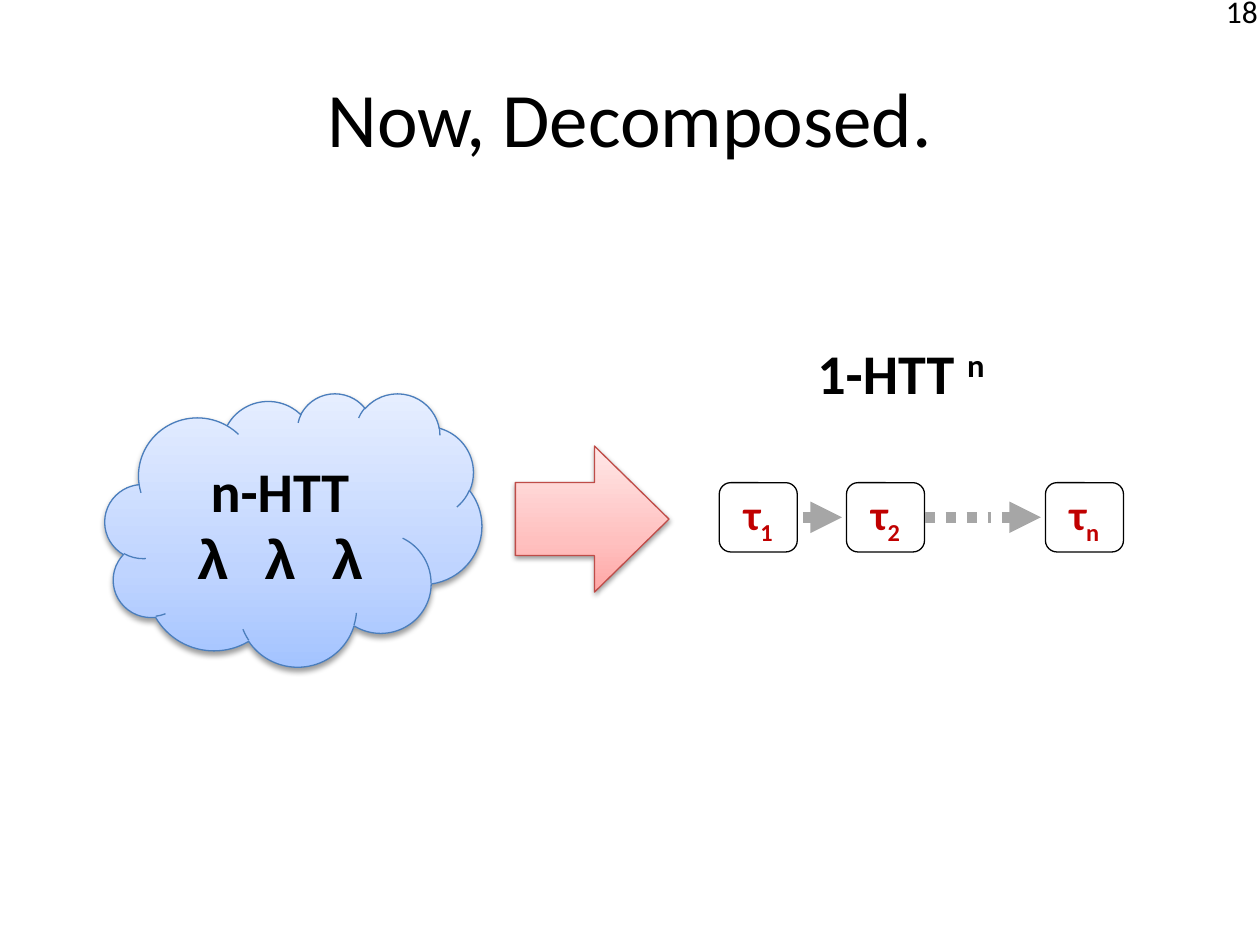
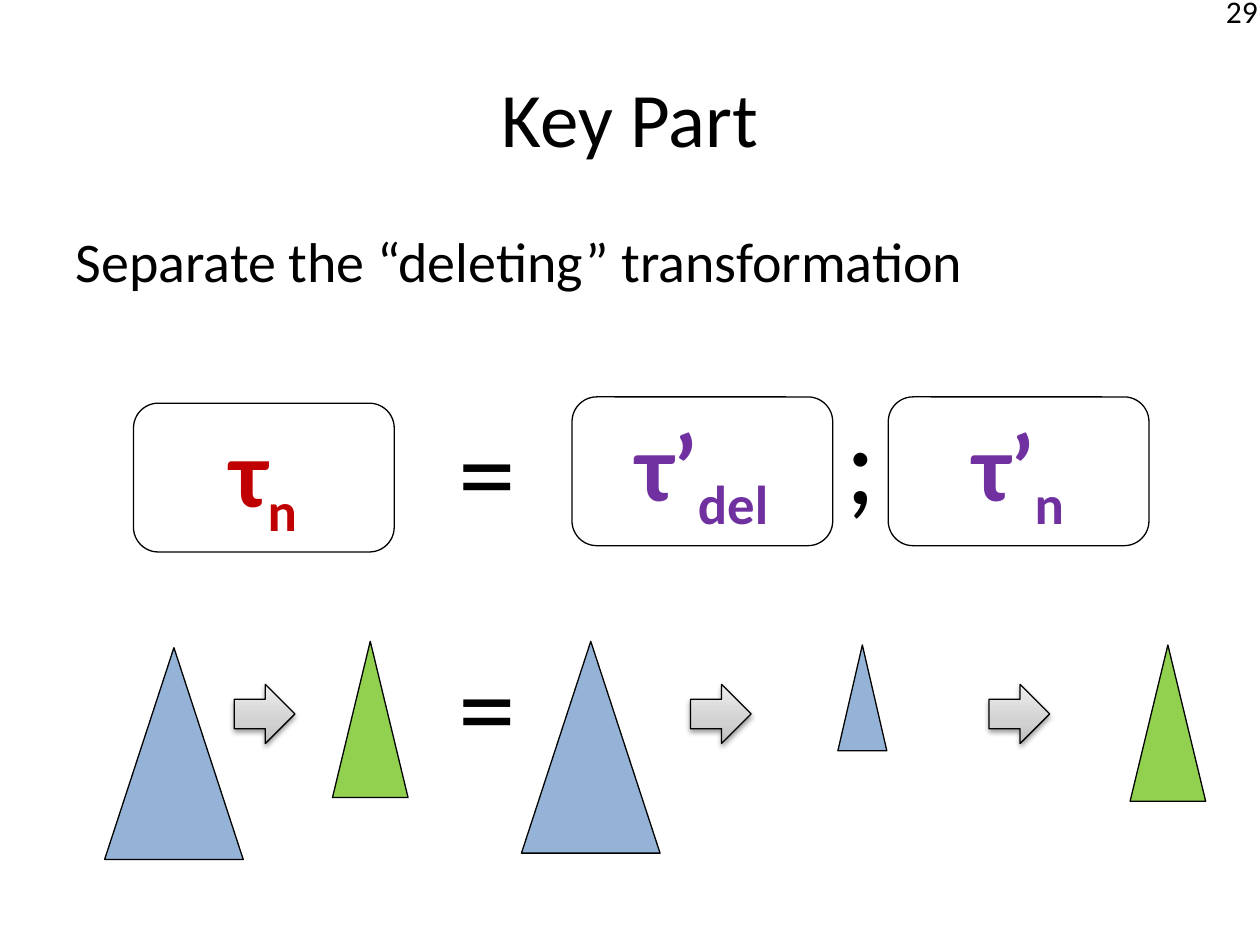
from lxml import etree
from pptx import Presentation
from pptx.dml.color import RGBColor
from pptx.enum import dml, shapes, text
from pptx.oxml import ns
from pptx.util import Pt

BLACK = RGBColor(0, 0, 0)
WHITE = RGBColor(255, 255, 255)
RED = RGBColor(0xC0, 0, 0)
PURPLE = RGBColor(0x70, 0x30, 0xA0)
GRAY = RGBColor(0xA6, 0xA6, 0xA6)
BLUE = RGBColor(0x95, 0xB3, 0xD7)
GREEN = RGBColor(0x92, 0xD0, 0x50)
BLUE_EDGE = RGBColor(0x4B, 0x7E, 0xBC)
RED_EDGE = RGBColor(0xBF, 0x4C, 0x48)

# Gradient stops at 0, 35 and 100 percent, from the bottom up
SKY = ("A4C4FF", "BFD4FF", "E6EEFF")
ROSE = ("FFA6A5", "FFC0BF", "FFE7E7")
SILVER = ("BDBDBD", "D1D1D1", "EEEEEE")

KIND = shapes.MSO_SHAPE
ALIGN = text.PP_ALIGN
PLAIN = {"size": Pt(32), "name": "Calibri", "bold": False}
BOLD = {**PLAIN, "bold": True}
TITLE = {**PLAIN, "size": Pt(44)}
SIGN = {**PLAIN, "size": Pt(66)}
FOLIO = {**PLAIN, "size": Pt(18)}


def node(root, tag, **attrs):
    return etree.SubElement(root, ns.qn("a:" + tag), attrs)


def place(item, box):
    for key, val in zip(("left", "top", "width", "height"), box):
        setattr(item, key, Pt(val))


def write(para, words, form, color=BLACK, base=0):
    run = para.add_run()
    run.text = words
    for key, val in form.items():
        setattr(run.font, key, val)
    run.font.color.rgb = color
    if base:
        run.font._element.set("baseline", str(base * 1000))


def label(slide, box, words, form, align=ALIGN.LEFT):
    item = slide.shapes.add_textbox(*map(Pt, box))
    item.text_frame.word_wrap = True
    para = item.text_frame.paragraphs[0]
    para.alignment = align
    write(para, words, form)
    return para


def form(slide, kind, box, fill, edge=BLACK):
    """Draw a preset shape with a flat colour, or a gradient with a shadow."""
    item = slide.shapes.add_shape(kind, *map(Pt, box))
    item.line.color.rgb, item.line.width = edge, Pt(0.75)
    item.shadow.inherit = False
    if isinstance(fill, RGBColor):
        item.fill.solid()
        item.fill.fore_color.rgb = fill
        return item
    item.fill.gradient()
    item.fill.gradient_angle = 90
    props = item._element.spPr
    stops = props.find(".//" + ns.qn("a:gsLst"))
    for old in list(stops):
        stops.remove(old)
    for pos, tint in zip((0, 35, 100), fill):
        node(node(stops, "gs", pos=str(pos * 1000)), "srgbClr", val=tint)
    glow = node(props.find(ns.qn("a:effectLst")), "outerShdw",
                blurRad=str(Pt(3.1)), dist=str(Pt(1.6)), dir="5400000",
                rotWithShape="0")
    node(node(glow, "srgbClr", val="000000"), "alpha", val="38000")
    return item


def center(item):
    frame = item.text_frame
    frame.word_wrap = False
    frame.vertical_anchor = text.MSO_ANCHOR.MIDDLE
    para = frame.paragraphs[0]
    para.alignment = ALIGN.CENTER
    return para


def step(slide, box, sub, size, color=RED, name="τ"):
    """Rounded box that holds a transformation and its subscript."""
    item = form(slide, KIND.ROUNDED_RECTANGLE, box, WHITE)
    para = center(item)
    font = {**BOLD, "size": Pt(size)}
    write(para, name, font, color)
    write(para, sub, font, color, -25)
    return item


def link(slide, start, end, y, dots=False):
    item = slide.shapes.add_connector(
        shapes.MSO_CONNECTOR.STRAIGHT, Pt(start), Pt(y), Pt(end), Pt(y))
    item.line.color.rgb, item.line.width = GRAY, Pt(6)
    if dots:
        item.line.dash_style = dml.MSO_LINE.ROUND_DOT
    else:
        node(item.line._get_or_add_ln(), "tailEnd", type="triangle")
    node(item._element.spPr, "effectLst")
    return item


def base(deck, layout, title, folio):
    """Start a slide with its title and number."""
    slide = deck.slides.add_slide(deck.slide_layouts[layout])
    head = slide.shapes.title
    place(head, (36, 21.6, 648, 90))
    write(center(head), title, TITLE)
    head.text_frame.word_wrap = True
    label(slide, (654.5, -7.9, 71.3, 28.8), folio, FOLIO, ALIGN.RIGHT)
    return slide


def cloud(slide, box):
    item = form(slide, KIND.CLOUD, box, SKY, BLUE_EDGE)
    write(center(item), "n-HTT", BOLD)
    para = item.text_frame.add_paragraph()
    para.alignment = ALIGN.CENTER
    write(para, "λ λ λ", {**BOLD, "name": "Courier New"})


def chain(slide, box):
    """Three steps in a row, the last after a dotted gap."""
    left, top, wide, high = box
    size, gap, reach = 44.6, 2.6, 22.3
    mid = top + high / 2
    spots = (left, left + 72.7, left + wide - size)
    steps = [step(slide, (x, top, size, high), sub, 24)
             for x, sub in zip(spots, "12n")]
    for x in spots[1:]:
        link(slide, x - gap - reach, x - gap, mid)
    edge = spots[1] + size
    link(slide, edge, edge + 38, mid, True).begin_connect(steps[1], 3)


def formula(slide, box):
    """The split of one transformation into two."""
    left, top = box[:2]
    size = (149, 85)
    step(slide, (left, top + 3.6, *size), "n", 54)
    for x, sub in ((250.6, "del"), (431.3, "n")):
        step(slide, (left + x, top, *size), sub, 54, PURPLE, "τ’")
    label(slide, (left + 178.6, top - 2.2, 70.6, 87.1), "=", SIGN)
    label(slide, (left + 399.6, top - 7.9, 35.3, 87.1), ";", SIGN)


def trees(slide, box):
    """The same split shown as trees that shrink and change."""
    left, top = box[:2]
    big, mid, small = (79.2, 121), (43.2, 89.3), (28, 60.5)
    for x, y, size, color in (
            (0, 3.6, big, BLUE), (130.2, 0, mid, GREEN),
            (238.2, 0, big, BLUE), (419, 2.1, small, BLUE),
            (586, 2.1, mid, GREEN)):
        form(slide, KIND.ISOSCELES_TRIANGLE, (left + x, top + y, *size), color)
    for x in (74.1, 334.8, 505.4):
        form(slide, KIND.RIGHT_ARROW, (left + x, top + 24.6, 34.6, 33.8), SILVER)
    label(slide, (left + 195.1, top - 8, 70.6, 87.1), "=", SIGN)


def split(deck):
    slide = base(deck, 5, "Now, Decomposed.", "18")
    cloud(slide, (60, 224.6, 215.3, 156.2))
    arrow = form(slide, KIND.RIGHT_ARROW, (294.5, 254.9, 87.8, 83.5),
                 ROSE, RED_EDGE)
    arrow.adjustments[1] = 0.51
    para = label(slide, (460, 190, 126.7, 46), "1-HTT ", BOLD)
    write(para, "n", BOLD, base=30)
    chain(slide, (411, 275.8, 231, 39.6))


def key(deck):
    slide = base(deck, 1, "Key Part", "29")
    body = slide.placeholders[1]
    place(body, (36, 126, 648, 356.4))
    para = body.text_frame.paragraphs[0]
    write(para, "Separate the “deleting” transformation", PLAIN)
    props = para._p.get_or_add_pPr()
    props.set("marL", "0")
    props.set("indent", "0")
    node(props, "buNone")
    formula(slide, (76.3, 226.8, 580, 88.6))
    trees(slide, (59.8, 366.5, 629.2, 124.6))


def main():
    deck = Presentation()
    deck.slide_width, deck.slide_height = Pt(720), Pt(540)
    split(deck)
    key(deck)
    deck.save("out.pptx")


if __name__ == "__main__":
    main()
